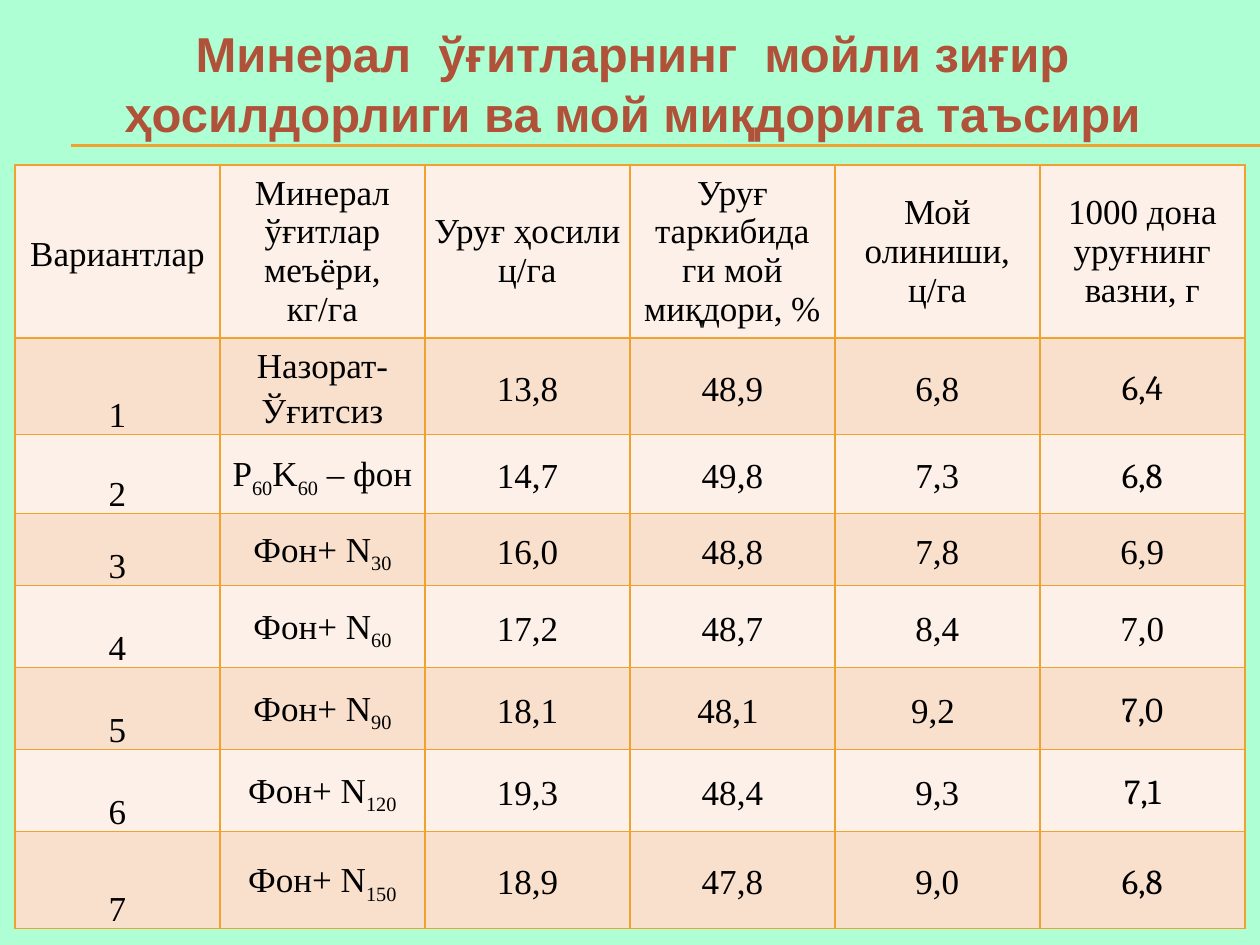
from dataclasses import dataclass

from lxml.etree import SubElement
from pptx import Presentation
from pptx.dml.color import RGBColor
from pptx.enum.shapes import MSO_CONNECTOR
from pptx.enum.text import MSO_ANCHOR, PP_ALIGN
from pptx.oxml.ns import qn
from pptx.util import Pt

SCALE = 914400 / 126


@dataclass(frozen=True)
class Theme:
    back: str = "AEFFD3"
    title: str = "B05239"
    text: str = "000000"
    line: str = "F0A22E"
    light: str = "FCF0E8"
    dark: str = "F9E0CD"
    head_font: str = "Arial"
    body_font: str = "Times New Roman"
    alt_font: str = "Cambria"
    head_size: int = 28
    body_size: int = 20
    rule: float = 0.75
    border: int = 1


THEME = Theme()
TITLE = "Минерал  ўғитларнинг  мойли зиғир ҳосилдорлиги ва мой миқдорига таъсири"
COL = 205
ROWS = [173, 96, 79, 72, 82, 82, 82, 97]
ALT_ROWS = {1, 2, 5, 6, 7}  # rows whose last value is in the second font
# Text between underscores is subscript; a line feed starts a paragraph.
CELLS = [
    ["Вариантлар", "Минерал ўғитлар меъёри, кг/га", "Уруғ ҳосили ц/га",
     "Уруғ таркибида\nги мой миқдори, %", "Мой олиниши, ц/га",
     "1000 дона уруғнинг вазни, г"],
    ["1", "Назорат-Ўғитсиз", "13,8", "48,9", "6,8", "6,4"],
    ["2", "P_60_K_60_ – фон", "14,7", "49,8", "7,3", "6,8"],
    ["3", "Фон+ N_30_", "16,0", "48,8", "7,8", "6,9"],
    ["4", "Фон+ N_60_", "17,2", "48,7", "8,4", "7,0"],
    ["5", "Фон+ N_90_", "18,1", "48,1 ", "9,2 ", "7,0"],
    ["6", "Фон+ N_120_", "19,3", "48,4", "9,3", "7,1"],
    ["7", "Фон+ N_150_", "18,9", "47,8", "9,0", "6,8"],
]


def px(num):
    return round(num * SCALE)


def rgb(code):
    return RGBColor.from_string(code)


def add_run(para, text, font, size, color, bold=False):
    run = para.add_run()
    run.text = text
    run.font.name = font
    run.font.size = Pt(size)
    run.font.bold = bold
    run.font.color.rgb = rgb(color)
    return run


def add_title(slide):
    box = slide.shapes.add_textbox(px(25), 0, px(1215), px(165))
    frame = box.text_frame
    frame.word_wrap = True
    frame.vertical_anchor = MSO_ANCHOR.MIDDLE
    para = frame.paragraphs[0]
    para.alignment = PP_ALIGN.CENTER
    para.line_spacing = Pt(34)
    add_run(para, TITLE, THEME.head_font, THEME.head_size, THEME.title, True)


def add_rule(slide, top):
    rule = slide.shapes.add_connector(
        MSO_CONNECTOR.STRAIGHT, px(71), px(top), px(1260), px(top))
    rule.line.color.rgb = rgb(THEME.line)
    rule.line.width = Pt(THEME.rule)
    SubElement(rule._element.spPr, qn("a:effectLst"))


def add_border(cell):
    """Draw all four sides; call before the fill, which must follow in the XML."""
    props = cell._tc.get_or_add_tcPr()
    for side in ("lnL", "lnR", "lnT", "lnB"):
        line = SubElement(props, qn(f"a:{side}"), w=str(Pt(THEME.border)))
        fill = SubElement(line, qn("a:solidFill"))
        SubElement(fill, qn("a:srgbClr"), val=THEME.line)


def fill_cell(cell, text, row, col):
    add_border(cell)
    cell.fill.solid()
    cell.fill.fore_color.rgb = rgb(THEME.dark if row % 2 else THEME.light)
    cell.margin_left = cell.margin_right = px(8)
    cell.margin_top = cell.margin_bottom = 0
    low = row > 0 and col == 0
    cell.vertical_anchor = MSO_ANCHOR.BOTTOM if low else MSO_ANCHOR.MIDDLE
    alt = col == 5 and row in ALT_ROWS
    font = THEME.alt_font if alt else THEME.body_font
    frame = cell.text_frame
    for num, line in enumerate(text.split("\n")):
        para = frame.add_paragraph() if num else frame.paragraphs[0]
        para.alignment = PP_ALIGN.CENTER
        para.line_spacing = 1.15 if row or col == 0 else 1.0
        for part, word in enumerate(line.split("_")):
            if word:
                run = add_run(para, word, font, THEME.body_size, THEME.text)
                if part % 2:
                    run._r.get_or_add_rPr().set("baseline", "-25000")


def add_grid(slide):
    cols = len(CELLS[0])
    table = slide.shapes.add_table(
        len(ROWS), cols, px(15), px(165), px(COL * cols), px(sum(ROWS))).table
    table.first_row = table.horz_banding = False
    for col in table.columns:
        col.width = px(COL)
    for row, (high, texts) in enumerate(zip(ROWS, CELLS)):
        table.rows[row].height = px(high)
        for col, text in enumerate(texts):
            fill_cell(table.cell(row, col), text, row, col)


def main():
    deck = Presentation()
    deck.slide_width, deck.slide_height = px(1260), px(945)
    slide = deck.slides.add_slide(deck.slide_layouts[6])
    slide.background.fill.solid()
    slide.background.fill.fore_color.rgb = rgb(THEME.back)
    for top in (145, 146):
        add_rule(slide, top)
    add_title(slide)
    add_grid(slide)
    deck.save("out.pptx")


if __name__ == "__main__":
    main()
